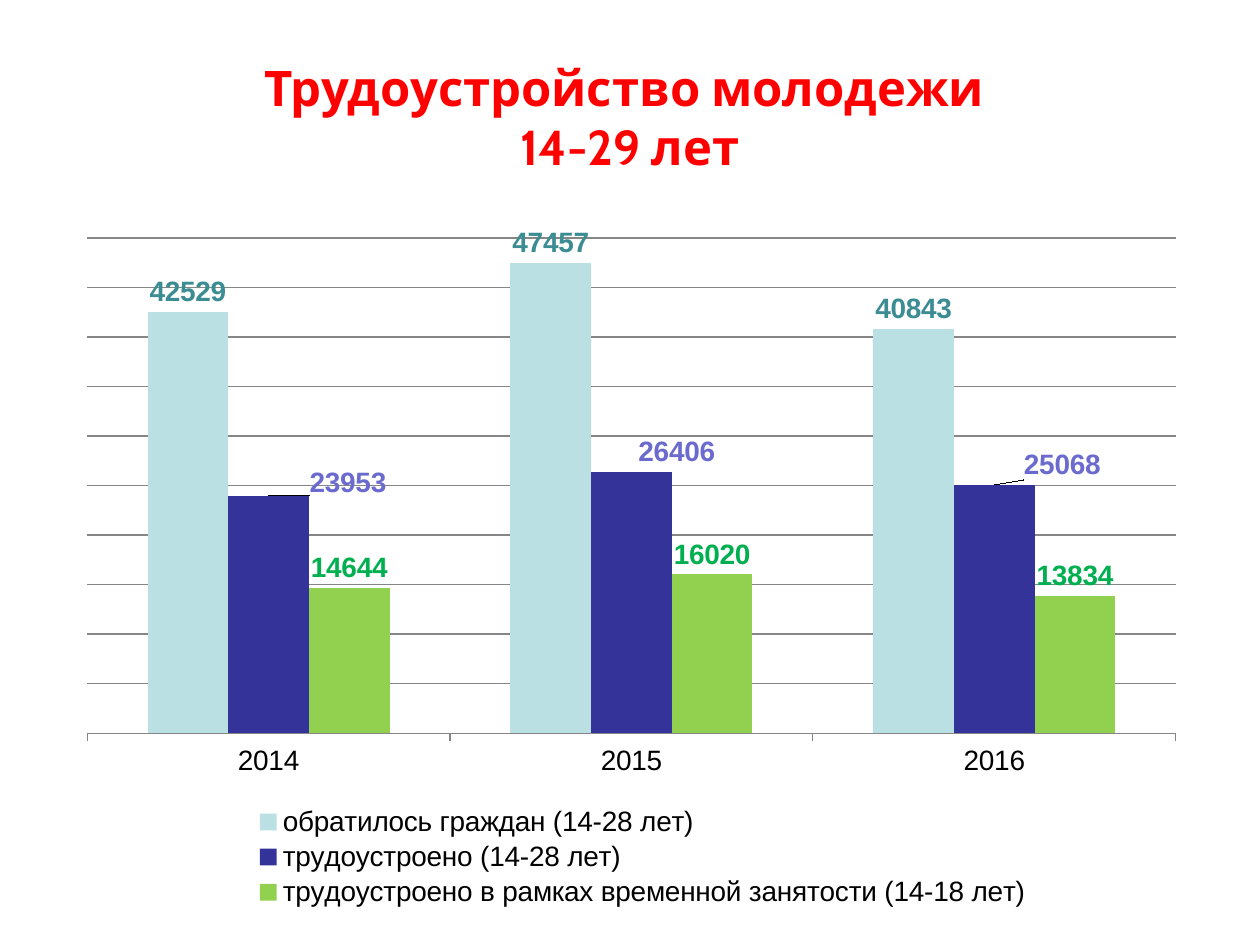
from dataclasses import dataclass

from lxml import etree
from pptx import Presentation
from pptx.chart.data import CategoryChartData
from pptx.dml.color import RGBColor
from pptx.enum.chart import XL_CHART_TYPE, XL_LABEL_POSITION, XL_LEGEND_POSITION, XL_TICK_MARK
from pptx.enum.text import MSO_ANCHOR, PP_ALIGN
from pptx.oxml.ns import qn
from pptx.util import Cm, Pt

COLUMNS = XL_CHART_TYPE.COLUMN_CLUSTERED
OUTSIDE_END = XL_LABEL_POSITION.OUTSIDE_END
LEGEND_BOTTOM = XL_LEGEND_POSITION.BOTTOM
TICK_OUTSIDE, TICK_NONE = XL_TICK_MARK.OUTSIDE, XL_TICK_MARK.NONE
MIDDLE, CENTER = MSO_ANCHOR.MIDDLE, PP_ALIGN.CENTER


@dataclass(frozen=True)
class Theme:
    title_font: str = "Cabin"
    chart_font: str = "Arial"
    title_size: int = 28
    chart_size: int = 16
    title_color: str = "FF0000"
    text_color: str = "000000"
    line_color: str = "868686"
    bar_colors: tuple = ("BBE0E3", "333399", "92D050")
    label_colors: tuple = ("3C8C93", "6B6BCF", "00B050")


YEARS = ("2014", "2015", "2016")
SERIES = {
    "обратилось граждан (14-28 лет)": (42529, 47457, 40843),
    "трудоустроено (14-28 лет)": (23953, 26406, 25068),
    "трудоустроено в рамках временной занятости (14-18 лет)": (14644, 16020, 13834),
}
EMPLOYED = 1
EMPLOYED_LABEL_SHIFTS = ((0.07, 0.01), (0.04, 0), (0.06, 0))


def manual_layout(**settings):
    """Return a c:layout element; settings are fractions of the chart area."""
    layout = etree.Element(qn("c:layout"))
    manual = etree.SubElement(layout, qn("c:manualLayout"))
    for name, value in settings.items():
        etree.SubElement(manual, qn(f"c:{name}")).set("val", str(value))
    return layout


class SlideBuilder:
    def __init__(self, presentation, theme):
        self.theme = theme
        self.slide = presentation.slides.add_slide(presentation.slide_layouts[5])

    def style_font(self, font, name, size, color, bold=False):
        font.name, font.size, font.bold = name, Pt(size), bold
        font.color.rgb = RGBColor.from_string(color)

    def add_title(self, text, left, top, width, height):
        title = self.slide.shapes.title
        title.left, title.top, title.width, title.height = left, top, width, height
        text_frame = title.text_frame
        text_frame.text = text
        text_frame.vertical_anchor = MIDDLE
        paragraph = text_frame.paragraphs[0]
        paragraph.alignment = CENTER
        theme = self.theme
        for run in paragraph.runs:
            self.style_font(run.font, theme.title_font, theme.title_size, theme.title_color, True)

    def add_column_chart(self, categories, series_values, left, top, width, height):
        data = CategoryChartData(number_format="General")
        data.categories = categories
        for name, values in series_values.items():
            data.add_series(name, values)
        chart = self.slide.shapes.add_chart(COLUMNS, left, top, width, height, data).chart
        theme = self.theme
        self.style_font(chart.font, theme.chart_font, theme.chart_size, theme.text_color)
        chart.has_title = False
        self.style_axes(chart)
        self.place_plot_and_legend(chart)
        plot = chart.plots[0]
        plot.gap_width, plot.overlap, plot.vary_by_categories = 150, 0, False
        for series, bar_color, label_color in zip(plot.series, theme.bar_colors, theme.label_colors):
            series.format.fill.solid()
            series.format.fill.fore_color.rgb = RGBColor.from_string(bar_color)
            labels = series.data_labels
            labels.show_value = True
            self.style_label(labels, label_color)
        return chart

    def style_label(self, label, color):
        label.position = OUTSIDE_END
        self.style_font(label.font, self.theme.chart_font, self.theme.chart_size, color, True)

    def style_axes(self, chart):
        line_color = RGBColor.from_string(self.theme.line_color)
        value_axis, category_axis = chart.value_axis, chart.category_axis
        value_axis.visible = False
        value_axis.minimum_scale, value_axis.maximum_scale = 0, 50000
        value_axis.major_unit = 5000
        value_axis.has_major_gridlines = True
        category_axis.major_tick_mark = TICK_OUTSIDE
        category_axis.minor_tick_mark = TICK_NONE
        for line in (value_axis.major_gridlines.format.line, category_axis.format.line):
            line.color.rgb = line_color
            line.width = Pt(0.75)

    def place_plot_and_legend(self, chart):
        chart.has_legend = True
        legend = chart.legend
        legend.position = LEGEND_BOTTOM
        legend.include_in_layout = False
        position_mark = legend._element.find(qn("c:legendPos"))
        position_mark.addnext(
            manual_layout(xMode="edge", yMode="edge", x=0.16, y=0.84, w=0.7, h=0.16))
        plot_area = chart._chartSpace.chart.plotArea
        for layout in plot_area.findall(qn("c:layout")):
            plot_area.remove(layout)
        plot_area.insert(0, manual_layout(
            layoutTarget="inner", xMode="edge", yMode="edge", x=0.02, y=0.02, w=0.96, h=0.72))

    def shift_labels(self, series, shifts, color):
        """Move each point's label by fractions of the chart's width and height."""
        for index in range(len(shifts)):
            self.style_label(series.points[index].data_label, color)
        point_labels = series.data_labels._element.findall(qn("c:dLbl"))
        for point_label, (x, y) in zip(point_labels, shifts):
            point_label.find(qn("c:idx")).addnext(manual_layout(x=x, y=y))


def main():
    presentation = Presentation()
    presentation.slide_width, presentation.slide_height = Cm(25.4), Cm(19.05)
    theme = Theme()
    builder = SlideBuilder(presentation, theme)
    builder.add_title("Трудоустройство молодежи \v14-29 лет",
                      Cm(1.27), Cm(0.76), Cm(22.86), Cm(3.18))
    chart = builder.add_column_chart(YEARS, SERIES, Cm(1.3), Cm(4.52), Cm(22.86), Cm(13.87))
    builder.shift_labels(chart.plots[0].series[EMPLOYED], EMPLOYED_LABEL_SHIFTS,
                         theme.label_colors[EMPLOYED])
    presentation.save("out.pptx")


if __name__ == "__main__":
    main()
